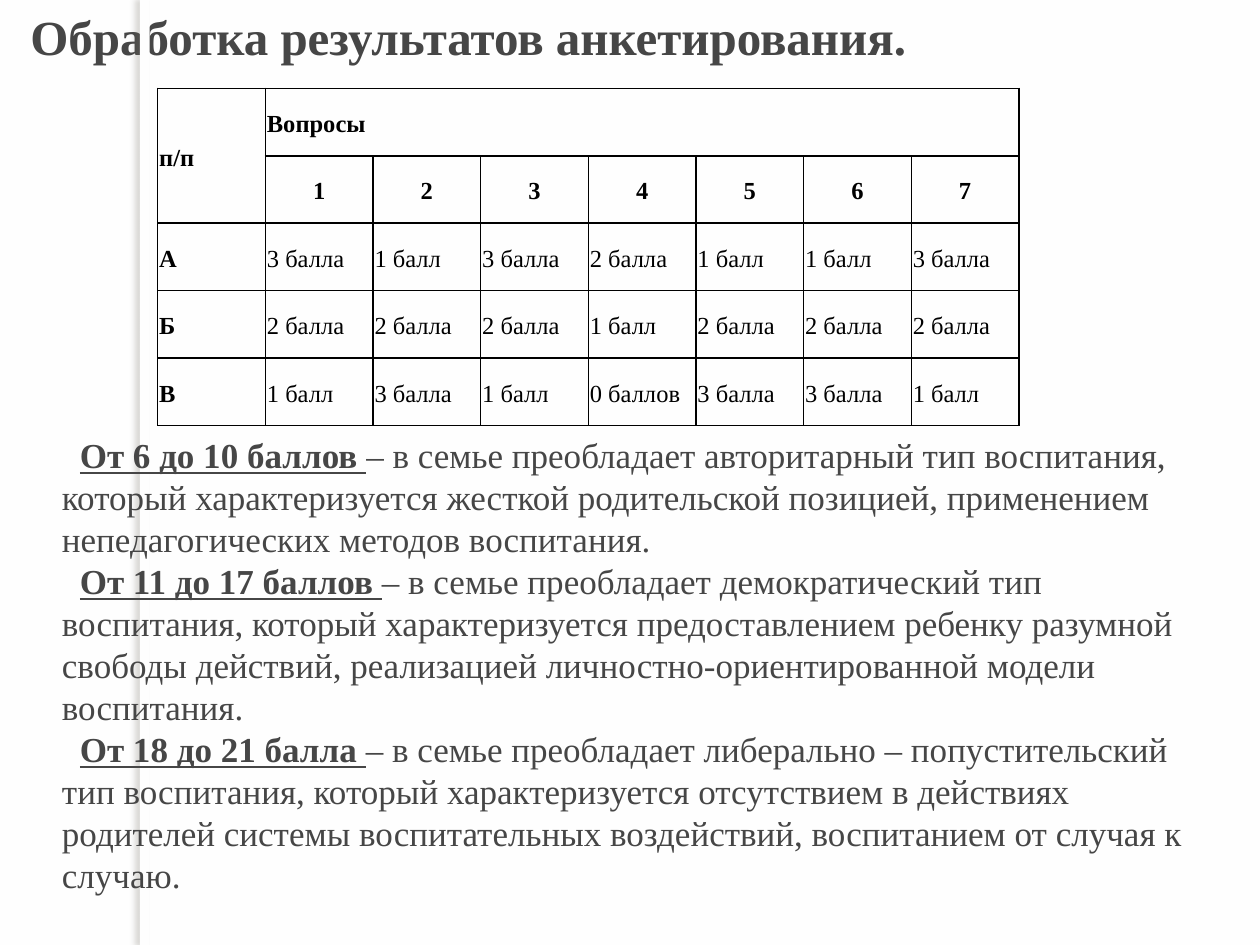
from lxml import etree
from pptx import Presentation
from pptx.dml.color import RGBColor
from pptx.enum import shapes, text
from pptx.oxml import ns
from pptx.util import Cm, Pt

COLORS = {"page": "FEFEFE", "ink": "464646", "table": "000000", "shadow": "736F63"}
FONT = "Times New Roman"

ANSWERS = {
    "А": ["3 балла", "1 балл", "3 балла", "2 балла", "1 балл", "1 балл", "3 балла"],
    "Б": ["2 балла", "2 балла", "2 балла", "1 балл", "2 балла", "2 балла", "2 балла"],
    "В": ["1 балл", "3 балла", "1 балл", "0 баллов", "3 балла", "3 балла", "1 балл"],
}
RESULTS = [
    ("От 6 до 10 баллов ",
     "– в семье преобладает авторитарный тип воспитания, который характеризуется "
     "жесткой родительской позицией, применением непедагогических методов воспитания."),
    ("От 11 до 17 баллов ",
     "– в семье преобладает демократический тип воспитания, который характеризуется "
     "предоставлением ребенку разумной свободы действий, реализацией "
     "личностно-ориентированной модели воспитания."),
    ("От 18 до 21 балла ",
     "– в семье преобладает либерально – попустительский тип воспитания, который "
     "характеризуется отсутствием в действиях родителей системы воспитательных "
     "воздействий, воспитанием от случая к случаю."),
]


def color(name):
    return RGBColor.from_string(COLORS[name])


def format_span(span, size, ink, bold=False, underline=False):
    font = span.font
    font.name, font.size, font.bold, font.underline = FONT, Pt(size), bold, underline
    font.color.rgb = color(ink)


def format_para(para):
    para.alignment = text.PP_ALIGN.LEFT
    para.line_spacing = 1.0
    para.space_before = para.space_after = Pt(0)
    props = para._p.get_or_add_pPr()
    props.set("marL", "0")
    props.set("indent", str(Cm(0.36)))


def place(shape, box):
    shape.left, shape.top, shape.width, shape.height = map(Cm, box)


def add_stripe(page, box):
    stripe = page.shapes.add_shape(shapes.MSO_SHAPE.RECTANGLE, *map(Cm, box))
    stripe.fill.solid()
    stripe.fill.fore_color.rgb = color("page")
    stripe.line.fill.background()
    # Soft shadow falling to the left
    stripe.shadow.inherit = False
    effects = stripe._element.spPr.find(ns.qn("a:effectLst"))
    shadow = etree.SubElement(effects, ns.qn("a:outerShdw"), blurRad=str(Pt(3)),
                              dist=str(Pt(3)), dir="10800000", rotWithShape="0")
    tone = etree.SubElement(shadow, ns.qn("a:srgbClr"), val=COLORS["shadow"])
    etree.SubElement(tone, ns.qn("a:alpha"), val="25000")


def add_title(page, box):
    title = page.shapes.title
    place(title, box)
    frame = title.text_frame
    frame.text = "Обработка результатов анкетирования."
    frame.word_wrap = False
    frame.auto_size = text.MSO_AUTO_SIZE.NONE
    frame.vertical_anchor = text.MSO_ANCHOR.MIDDLE
    para = frame.paragraphs[0]
    format_para(para)
    format_span(para.runs[0], 28, "ink", bold=True)


def set_borders(cell):
    props = cell._tc.get_or_add_tcPr()
    for index, side in enumerate(("lnL", "lnR", "lnT", "lnB")):
        line = etree.Element(ns.qn(f"a:{side}"), w=str(Pt(1)))
        fill = etree.SubElement(line, ns.qn("a:solidFill"))
        etree.SubElement(fill, ns.qn("a:srgbClr"), val=COLORS["table"])
        props.insert(index, line)


def format_cell(cell, bold, centered):
    cell.fill.background()
    set_borders(cell)
    cell.vertical_anchor = text.MSO_ANCHOR.MIDDLE
    cell.margin_left = cell.margin_right = Cm(0.03)
    cell.margin_top = cell.margin_bottom = Cm(0.03)
    para = cell.text_frame.paragraphs[0]
    para.line_spacing = 1.15
    para.alignment = text.PP_ALIGN.CENTER if centered else text.PP_ALIGN.LEFT
    for span in para.runs:
        format_span(span, 14, "table", bold)


def add_score_table(page, box):
    numbers = [str(number) for number in range(1, 8)]
    rows = [["п/п", "Вопросы"] + [""] * 6, [""] + numbers]
    rows += [[letter] + scores for letter, scores in ANSWERS.items()]
    table = page.shapes.add_table(len(rows), len(rows[0]), *map(Cm, box)).table
    table.first_row = table.horz_banding = False
    for r, row in enumerate(rows):
        for c, words in enumerate(row):
            cell = table.cell(r, c)
            cell.text_frame.text = words
            format_cell(cell, bold=r < 2 or c == 0, centered=r == 1)
    # Headings spanning rows and columns
    table.cell(0, 0).merge(table.cell(1, 0))
    table.cell(0, 1).merge(table.cell(0, 7))


def add_results(page, box):
    frame = page.shapes.add_textbox(*map(Cm, box)).text_frame
    frame.word_wrap = True
    frame.vertical_anchor = text.MSO_ANCHOR.TOP
    for index, (score, meaning) in enumerate(RESULTS):
        para = frame.add_paragraph() if index else frame.paragraphs[0]
        format_para(para)
        for words, strong in ((score, True), (meaning, False)):
            span = para.add_run()
            span.text = words
            format_span(span, 20, "ink", bold=strong, underline=strong)


def main():
    deck = Presentation()
    deck.slide_width, deck.slide_height = Cm(25.4), Cm(19.05)
    page = deck.slides.add_slide(deck.slide_layouts[5])
    page.background.fill.solid()
    page.background.fill.fore_color.rgb = color("page")
    add_stripe(page, (2.82, 0, 0.2, 19.05))
    add_score_table(page, (3.18, 1.78, 17.36, 6.8))
    add_title(page, (0, 0, 18.7, 1.45))
    add_results(page, (1, 8.62, 23.62, 10.43))
    deck.save("out.pptx")


if __name__ == "__main__":
    main()
